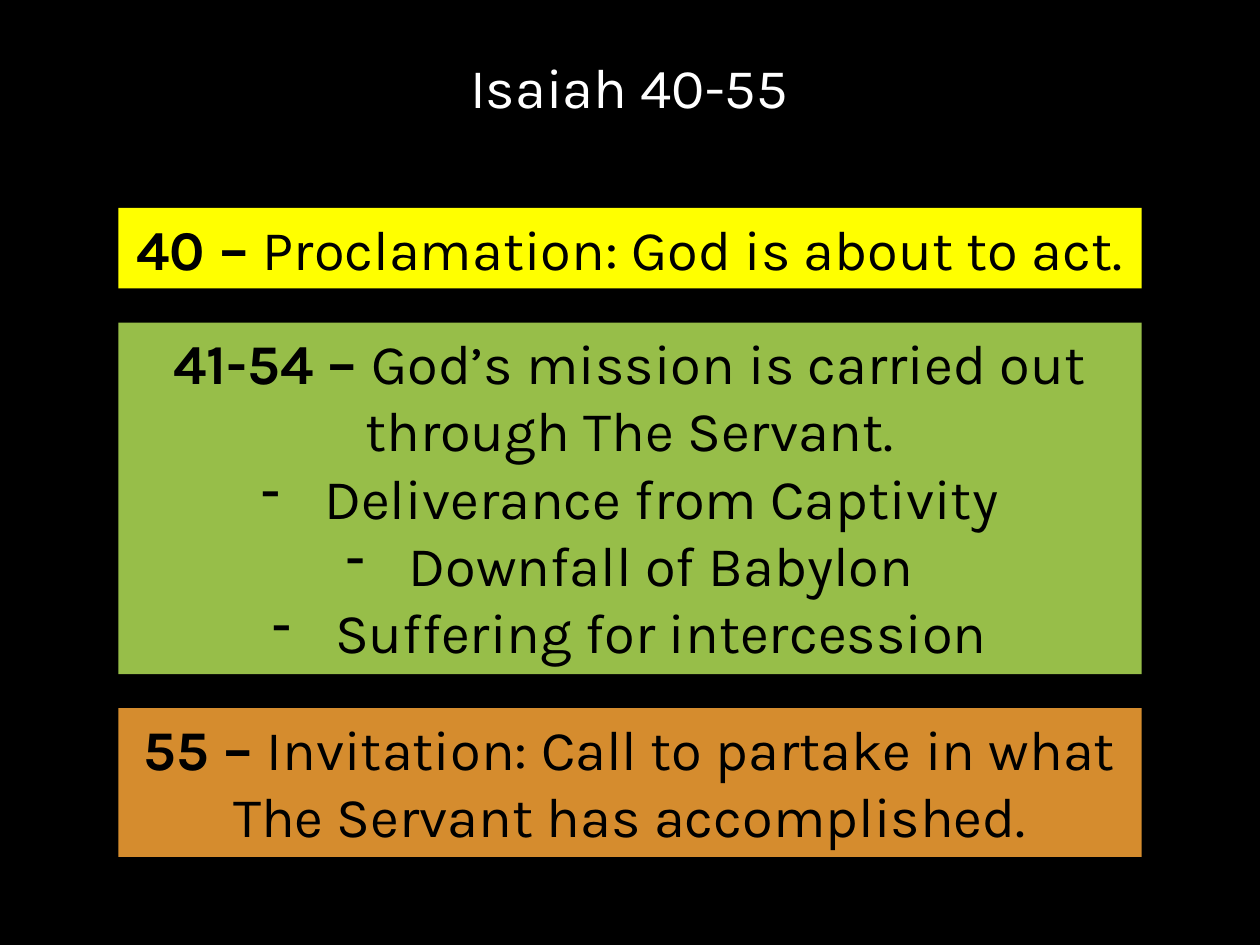
from lxml import etree
from pptx import Presentation, util as u
from pptx.dml.color import RGBColor
from pptx.enum import shapes, text
from pptx.oxml.ns import qn


def colour(hex_string):
    return RGBColor.from_string(hex_string)


class SlideBuilder:
    font_name = "Karla"
    font_size = u.Pt(32)

    def __init__(self, slide, background):
        self.slide = slide
        fill = slide.background.fill
        fill.solid()
        fill.fore_color.rgb = colour(background)

    def style_runs(self, paragraph, text_colour):
        paragraph.alignment = text.PP_ALIGN.CENTER
        for run in paragraph.runs:
            run.font.name = self.font_name
            run.font.size = self.font_size
            run.font.color.rgb = colour(text_colour)

    def dash_bullet(self, paragraph):
        properties = paragraph._p.get_or_add_pPr()
        properties.set("marL", str(u.Inches(0.5)))
        properties.set("indent", str(u.Inches(-0.5)))
        etree.SubElement(properties, qn("a:buFontTx"))
        etree.SubElement(properties, qn("a:buChar")).set("char", "-")

    def title(self, wording, left, top, width, height):
        box = self.slide.shapes.add_textbox(left, top, width, height)
        frame = box.text_frame
        frame.word_wrap = True
        frame.vertical_anchor = text.MSO_ANCHOR.MIDDLE
        frame.text = wording
        frame.paragraphs[0].line_spacing = 0.9
        self.style_runs(frame.paragraphs[0], "FFFFFF")

    def panel(self, chapters, summary, points, fill, left, top, width, height):
        shape = self.slide.shapes.add_shape(
            shapes.MSO_SHAPE.RECTANGLE, left, top, width, height)
        shape.shadow.inherit = False
        shape.fill.solid()
        shape.fill.fore_color.rgb = colour(fill)
        shape.line.fill.background()
        frame = shape.text_frame
        frame.word_wrap = True
        frame.auto_size = text.MSO_AUTO_SIZE.SHAPE_TO_FIT_TEXT
        frame.vertical_anchor = text.MSO_ANCHOR.TOP

        # Chapter numbers in bold, then the summary
        heading = frame.paragraphs[0]
        for wording, bold in ((f"{chapters} – ", True), (summary, False)):
            run = heading.add_run()
            run.text = wording
            run.font.bold = bold
        self.style_runs(heading, "000000")

        # Dashed points
        for point in points:
            paragraph = frame.add_paragraph()
            paragraph.text = point
            self.dash_bullet(paragraph)
            self.style_runs(paragraph, "000000")


def main():
    presentation = Presentation()
    presentation.slide_width = u.Inches(10)
    presentation.slide_height = u.Inches(7.5)
    slide = presentation.slides.add_slide(presentation.slide_layouts[6])
    builder = SlideBuilder(slide, "000000")

    # Title
    builder.title("Isaiah 40-55", u.Inches(0.53), u.Inches(0.4),
                  u.Inches(8.93), u.Inches(0.63))

    # Panels stacked with equal gaps
    panels = [
        ("40", "Proclamation: God is about to act.", [], "FFFF00", 0.64),
        ("41-54", "God’s mission is carried out through The Servant.",
         ["Deliverance from Captivity", "Downfall of Babylon",
          "Suffering for intercession"], "97BE49", 2.79),
        ("55", "Invitation: Call to partake in what The Servant has accomplished.",
         [], "D58C2E", 1.18),
    ]
    top, gap = 1.65, 0.27
    for chapters, summary, points, fill, height in panels:
        builder.panel(chapters, summary, points, fill, u.Inches(0.94),
                      u.Inches(top), u.Inches(8.12), u.Inches(height))
        top += height + gap

    presentation.save("out.pptx")


if __name__ == "__main__":
    main()
